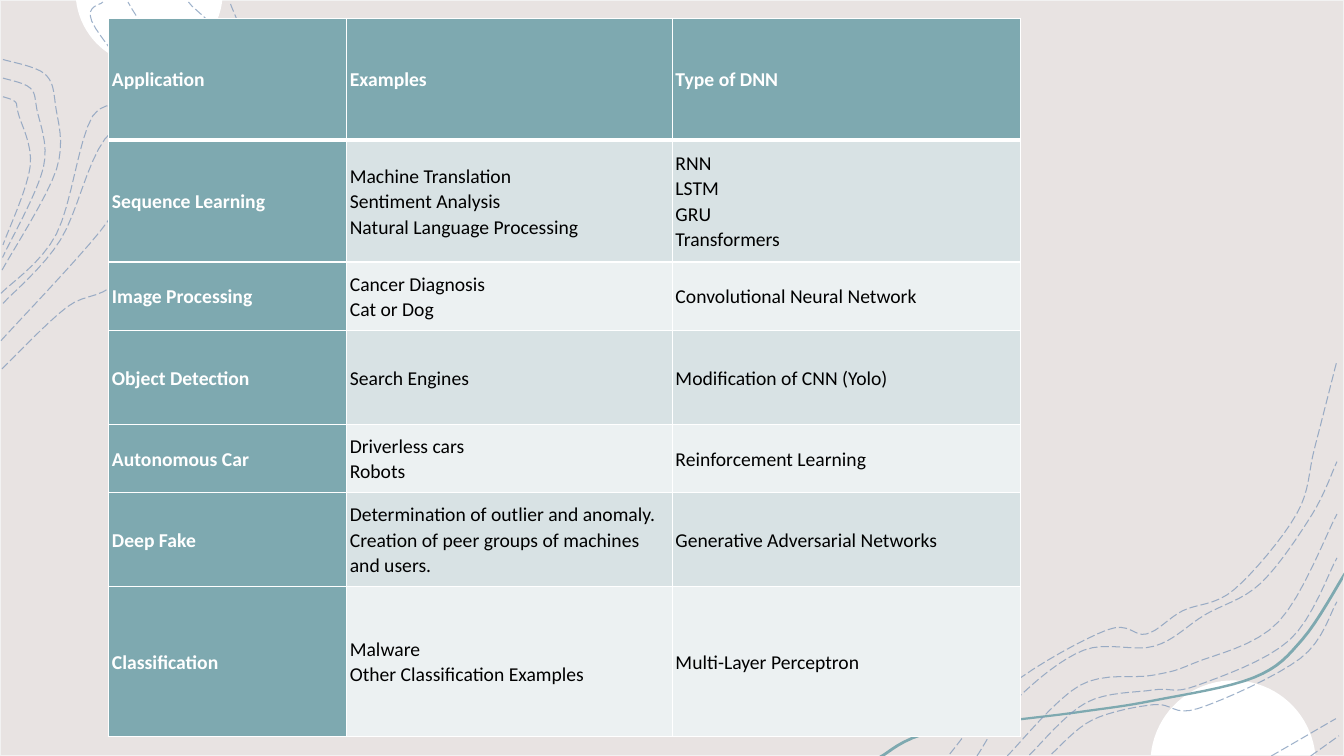
from math import cos, pi, sin

from lxml.etree import SubElement
from pptx import Presentation
from pptx.dml.color import RGBColor
from pptx.enum.dml import MSO_LINE
from pptx.enum.shapes import MSO_SHAPE
from pptx.enum.text import MSO_ANCHOR
from pptx.oxml import parse_xml
from pptx.oxml.ns import nsdecls, qn
from pptx.util import Inches, Pt

WHITE = RGBColor.from_string("FFFFFF")
BLACK = RGBColor.from_string("000000")
SAND = RGBColor.from_string("E8E3E2")
FRAME = RGBColor.from_string("F2F2F2")
TEAL = RGBColor.from_string("7EA9B0")
CONTOUR = RGBColor.from_string("7F99BA")
BANDS = [RGBColor.from_string("D8E2E4"), RGBColor.from_string("ECF1F2")]
WIDTH, HEIGHT = 13.33, 7.5

LEFT_SWEEPS = [
    [(0.02, 3.66), (0.66, 3.05), (1.27, 2.69), (2.19, 1.2), (2.42, 0.53), (2.28, 0.02)],
    [(0.01, 3.38), (0.99, 2.3), (1.37, 1.68), (2.18, 0.56), (1.87, 0.02)],
    [(0.03, 3.01), (0.6, 2.38), (1.04, 1.38), (1.69, 0.89), (1.27, 0.02)],
    [(0.01, 2.91), (0.56, 2.32), (0.92, 1.15), (1.4, 0.98), (0.91, 0.21), (1.02, 0.02)],
]
RIGHT_SWEEPS = [
    [(9.42, 7.48), (10.02, 6.8), (10.98, 6.25), (11.37, 6.29), (11.73, 6.06), (12.24, 5.85),
     (12.86, 5.1), (13.04, 4.44), (13.26, 3.58)],
    [(9.69, 7.5), (10.08, 6.94), (10.75, 6.45), (11.45, 6.41), (11.95, 6.1), (12.5, 5.79),
     (13.01, 5.11), (13.26, 4.58)],
    [(13, 7.5), (13.28, 7.3)],
    [(12.61, 7.5), (13.25, 7.13)],
]
OUTER_HOOK = [(0.03, 0.59), (0.44, 0.73), (0.55, 1.04), (0.56, 1.68), (0.02, 2.68)]
INNER_HOOK = [(0.03, 0.96), (0.15, 1.01), (0.18, 1.12), (0.3, 1.65), (0.03, 2.43)]
UPPER_BANK = [(9.99, 7.5), (10.71, 6.8), (11.43, 6.7), (11.84, 6.58), (12.68, 6.17), (13.26, 5.1)]
LOWER_BANK = [(10.43, 7.48), (10.84, 7.14), (11.45, 6.99), (11.88, 7.03), (12.9, 6.53), (13.26, 5.97)]
RIBBON = [(8.72, 7.5), (9.24, 7.25), (10.65, 7.06), (11.43, 6.94), (12.43, 6.71), (12.91, 6.33),
          (13.33, 5.68)]

COLUMNS = [2.36, 3.23, 3.45]
ROWS = [1.21, 1.21, 0.68, 0.93, 0.68, 0.93, 1.49]
APPLICATIONS = [
    ("Application", "Examples", "Type of DNN"),
    ("Sequence Learning", "Machine Translation\nSentiment Analysis\nNatural Language Processing",
     "RNN\nLSTM\nGRU\nTransformers"),
    ("Image Processing", "Cancer Diagnosis\nCat or Dog", "Convolutional Neural Network"),
    ("Object Detection", "Search Engines", "Modification of CNN (Yolo)"),
    ("Autonomous Car", "Driverless cars\nRobots", "Reinforcement Learning"),
    ("Deep Fake", "Determination of outlier and anomaly. Creation of peer groups of machines and users.",
     "Generative Adversarial Networks"),
    ("Classification", "Malware\nOther Classification Examples", "Multi-Layer Perceptron"),
]


def spline(points, steps=8):
    """Return points along a Catmull-Rom curve through the given points."""
    padded = [points[0], *points, points[-1]]
    curve = [points[0]]
    for a, b, c, d in zip(padded, padded[1:], padded[2:], padded[3:]):
        for i in range(1, steps + 1):
            t = i / steps
            curve.append(tuple(
                q + t / 2 * (r - p + t * (2 * p - 5 * q + 4 * r - s + t * (3 * q - p - 3 * r + s)))
                for p, q, r, s in zip(a, b, c, d)))
    return curve


def midway(first, second):
    """Return the curve points halfway between two matching curves."""
    return [((a + c) / 2, (b + d) / 2) for (a, b), (c, d) in zip(first, second)]


def arc(cx, cy, radius, start, end, steps=40):
    angles = [start + (end - start) * i / steps for i in range(steps + 1)]
    return [(cx + radius * cos(a), cy + radius * sin(a)) for a in angles]


class SlideBuilder:
    font, size, spacing, inset = "Calibri", Pt(14), 1.07, Inches(0.03)

    def __init__(self, slide):
        self.slide = slide

    def background(self):
        sp = self.slide.shapes.add_shape(MSO_SHAPE.RECTANGLE, 0, 0, Inches(WIDTH), Inches(HEIGHT))
        sp.shadow.inherit = False
        sp.fill.solid()
        sp.fill.fore_color.rgb = SAND
        sp.line.color.rgb = FRAME
        sp.line.width = Pt(1)

    def outline(self, points, close):
        pts = [(Inches(x), Inches(y)) for x, y in points]
        builder = self.slide.shapes.build_freeform(*pts[0])
        builder.add_line_segments(pts[1:], close=close)
        sp = builder.convert_to_shape()
        sp.shadow.inherit = False
        return sp

    def area(self, points, color):
        sp = self.outline(points, True)
        sp.fill.solid()
        sp.fill.fore_color.rgb = color
        sp.line.fill.background()

    def contour(self, points):
        sp = self.outline(spline(points), False)
        sp.fill.background()
        sp.line.color.rgb = CONTOUR
        sp.line.width = Pt(0.75)
        sp.line.dash_style = MSO_LINE.LONG_DASH
        color = sp._element.spPr.find(qn("a:ln")).find(".//" + qn("a:srgbClr"))
        SubElement(color, qn("a:alpha"), val="75000")

    def table(self, left, top, columns, rows, texts):
        table = self.slide.shapes.add_table(
            len(rows), len(columns), Inches(left), Inches(top),
            Inches(sum(columns)), Inches(sum(rows))).table
        table.first_col = True
        for column, width in zip(table.columns, columns):
            column.width = Inches(width)
        for i, (row, height) in enumerate(zip(table.rows, rows)):
            row.height = Inches(height)
            for j, cell in enumerate(row.cells):
                heading = i == 0 or j == 0
                self.cell(cell, texts[i][j], TEAL if heading else BANDS[(i - 1) % 2], heading)
                self.borders(cell, 3 if i == 1 else 1, 3 if i == 0 else 1)

    def cell(self, cell, text, fill, heading):
        cell.fill.solid()
        cell.fill.fore_color.rgb = fill
        cell.vertical_anchor = MSO_ANCHOR.MIDDLE
        cell.margin_left = cell.margin_right = cell.margin_top = cell.margin_bottom = self.inset
        cell.text = text
        for p in cell.text_frame.paragraphs:
            p.line_spacing = self.spacing
            p.font.name, p.font.size, p.font.bold = self.font, self.size, heading
            p.font.color.rgb = WHITE if heading else BLACK

    def borders(self, cell, top, bottom):
        widths = {"lnL": 1, "lnR": 1, "lnT": top, "lnB": bottom}
        for k, (tag, width) in enumerate(widths.items()):
            cell._tc.get_or_add_tcPr().insert(k, parse_xml(
                f'<a:{tag} {nsdecls("a")} w="{Pt(width)}"><a:solidFill>'
                f'<a:srgbClr val="{WHITE}"/></a:solidFill></a:{tag}>'))


def main():
    prs = Presentation()
    prs.slide_width, prs.slide_height = Inches(WIDTH), Inches(HEIGHT)
    s = SlideBuilder(prs.slides.add_slide(prs.slide_layouts[6]))
    s.background()
    s.area(arc(1.48, -0.08, 0.73, 0.11, pi - 0.11), WHITE)
    s.area(arc(12.23, 7.57, 0.82, pi + 0.1, 2 * pi - 0.1), WHITE)
    upper = spline(RIBBON)
    lower = [(min(x + 0.02, WIDTH), min(y + 0.02, HEIGHT)) for x, y in reversed(upper)]
    s.area(upper + lower, TEAL)
    for points in LEFT_SWEEPS + RIGHT_SWEEPS:
        s.contour(points)
    for first, last in [(OUTER_HOOK, INNER_HOOK), (UPPER_BANK, LOWER_BANK)]:
        for points in (first, midway(first, last), last):
            s.contour(points)
    s.table(1.08, 0.18, COLUMNS, ROWS, APPLICATIONS)
    prs.save("out.pptx")


if __name__ == "__main__":
    main()
